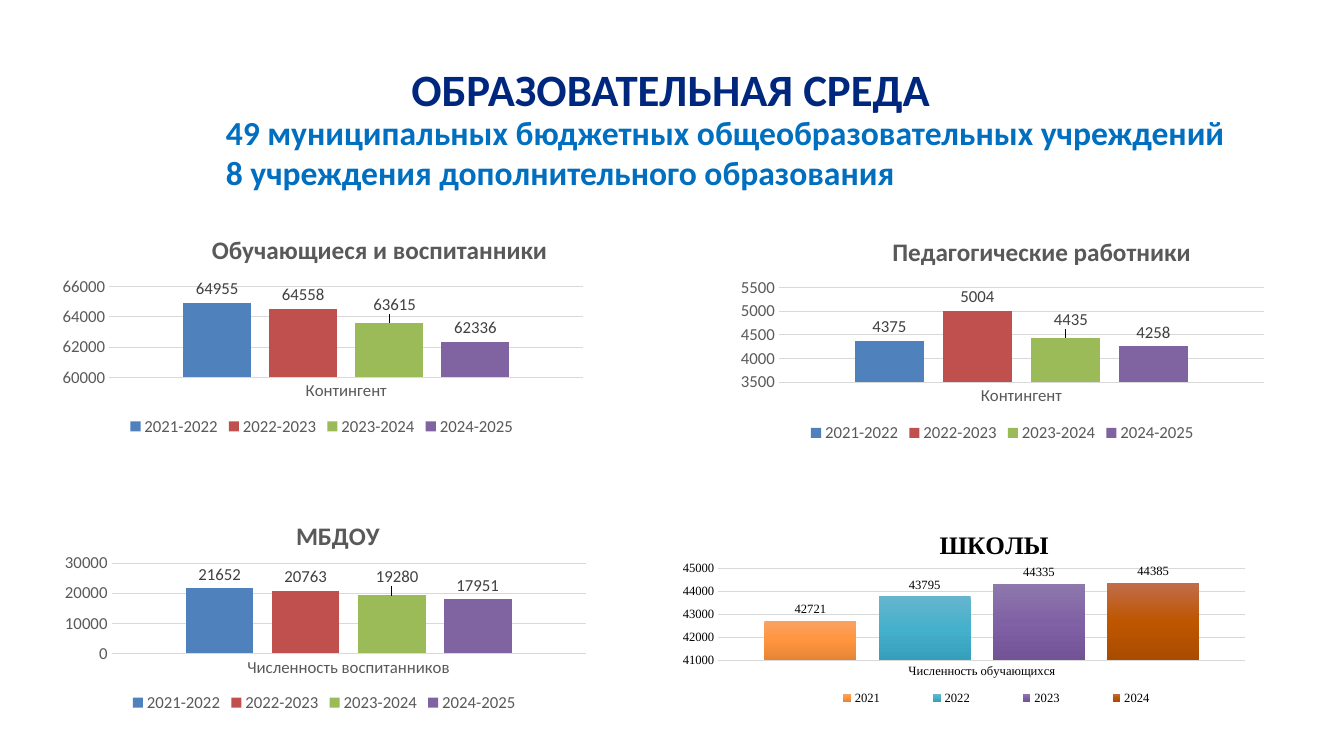
from pptx import Presentation
from pptx.chart.data import CategoryChartData
from pptx.dml.color import RGBColor
from pptx.enum.chart import XL_CHART_TYPE, XL_LABEL_POSITION, XL_LEGEND_POSITION, XL_TICK_MARK
from pptx.enum.text import MSO_ANCHOR, MSO_AUTO_SIZE, PP_ALIGN
from pptx.oxml import parse_xml
from pptx.oxml.ns import nsdecls, qn
from pptx.util import Cm, Pt

NAVY = RGBColor(0x00, 0x27, 0x7E)
BLUE = RGBColor(0x00, 0x6F, 0xC0)
BLACK = RGBColor(0x00, 0x00, 0x00)
DARK = RGBColor(0x40, 0x40, 0x40)
GREY = RGBColor(0x59, 0x59, 0x59)
PALE = RGBColor(0xD9, 0xD9, 0xD9)
SOLID = [
    RGBColor(0x4F, 0x81, 0xBD),
    RGBColor(0xC0, 0x50, 0x4D),
    RGBColor(0x9B, 0xBB, 0x59),
    RGBColor(0x80, 0x64, 0xA2),
]
BLEND = [
    (RGBColor(0xFA, 0xA2, 0x63), RGBColor(0xFF, 0x95, 0x3E), RGBColor(0xE5, 0x84, 0x35)),
    (RGBColor(0x66, 0xB5, 0xCD), RGBColor(0x45, 0xB0, 0xCC), RGBColor(0x36, 0xA0, 0xBC)),
    (RGBColor(0x8E, 0x78, 0xAC), RGBColor(0x80, 0x61, 0xA5), RGBColor(0x71, 0x53, 0x96)),
    (RGBColor(0xC1, 0x6D, 0x4B), RGBColor(0xBE, 0x56, 0x00), RGBColor(0xA9, 0x4C, 0x00)),
]
TERMS = ["2021-2022", "2022-2023", "2023-2024", "2024-2025"]
YEARS = ["2021", "2022", "2023", "2024"]


def style(font, size, color, face="Calibri", bold=False):
    font.size = Pt(size)
    font.color.rgb = color
    font.name = face
    font.bold = bold


def write(frame, lines, align=PP_ALIGN.LEFT, **look):
    frame.text = "\n".join(lines)
    for para in frame.paragraphs:
        para.alignment = align
        para.space_before = Pt(0)
        for run in para.runs:
            style(run.font, **look)


def fill_holder(shape, box, lines, **look):
    shape.left, shape.top, shape.width, shape.height = map(Cm, box)
    frame = shape.text_frame
    frame.margin_left = frame.margin_right = frame.margin_top = frame.margin_bottom = 0
    frame.word_wrap = True
    frame.auto_size = MSO_AUTO_SIZE.SHAPE_TO_FIT_TEXT
    frame.vertical_anchor = MSO_ANCHOR.TOP
    write(frame, lines, **look)
    for para in frame.paragraphs:
        props = para._p.get_or_add_pPr()
        props.set("marL", "0")
        props.set("indent", "0")
        props.append(parse_xml(f"<a:buNone {nsdecls('a')}/>"))


def place(node, index, spot, inner=False, edge=True):
    old = node.find(qn("c:layout"))
    if old is not None:
        node.remove(old)
    parts = ['<c:layoutTarget val="inner"/>'] if inner else []
    if edge:
        parts += ['<c:xMode val="edge"/>', '<c:yMode val="edge"/>']
    parts += [f'<c:{key} val="{val}"/>' for key, val in zip("xywh", spot)]
    node.insert(index, parse_xml(
        f"<c:layout {nsdecls('c')}><c:manualLayout>{''.join(parts)}</c:manualLayout></c:layout>"))


def paint(series, tint):
    if isinstance(tint, RGBColor):
        series.format.fill.solid()
        series.format.fill.fore_color.rgb = tint
        return
    stops = "".join(
        f'<a:gs pos="{i * 50000}"><a:srgbClr val="{color}"/></a:gs>' for i, color in enumerate(tint))
    series._element.get_or_add_spPr().append(parse_xml(
        f"<a:gradFill {nsdecls('a')}><a:gsLst>{stops}</a:gsLst>"
        '<a:lin ang="5400000" scaled="0"/></a:gradFill>'))


def set_axes(chart, scale, width, look):
    cat, val = chart.category_axis, chart.value_axis
    for axis in (cat, val):
        axis.major_tick_mark = axis.minor_tick_mark = XL_TICK_MARK.NONE
        style(axis.tick_labels.font, **look)
    cat.format.line.color.rgb = PALE
    cat.format.line.width = Pt(width)
    val.format.line.fill.background()
    val.minimum_scale, val.maximum_scale, val.major_unit = scale
    val.has_major_gridlines = True
    val.major_gridlines.format.line.color.rgb = PALE
    val.major_gridlines.format.line.width = Pt(0.75)


def add_bars(slide, box, title, spot, group, names, values, scale, plot,
             tints=SOLID, face="Calibri", size=12, color=GREY, tone=DARK,
             gap=219, lap=-27, width=0.75, key=None, lift=2):
    data = CategoryChartData()
    data.categories = [group]
    for name, value in zip(names, values):
        data.add_series(name, [value])
    chart = slide.shapes.add_chart(XL_CHART_TYPE.COLUMN_CLUSTERED, *map(Cm, box), data).chart
    style(chart.font, 10, BLACK, face)
    chart.has_title = True
    write(chart.chart_title.text_frame, [title], align=PP_ALIGN.CENTER,
          size=18, color=color, face=face, bold=True)
    place(chart.chart_title._element, 1, spot)
    place(chart._chartSpace.chart.plotArea, 0, plot, inner=True)

    look = dict(size=size, color=color, face=face)
    set_axes(chart, scale, width, look)
    chart.has_legend = True
    chart.legend.position = XL_LEGEND_POSITION.BOTTOM
    chart.legend.include_in_layout = False
    style(chart.legend.font, **look)
    if key:
        place(chart.legend._element, 1, key)

    bars = chart.plots[0]
    bars.vary_by_categories = False
    bars.gap_width, bars.overlap = gap, lap
    for i, (series, tint) in enumerate(zip(bars.series, tints)):
        paint(series, tint)
        labels = series.data_labels
        labels.show_value = True
        labels.position = XL_LABEL_POSITION.OUTSIDE_END
        style(labels.font, size, tone, face)
        if i == lift:
            label = series.points[0].data_label
            style(label.font, size, tone, face)
            label.position = XL_LABEL_POSITION.OUTSIDE_END
            place(series._element.find(".//" + qn("c:dLbl")), 1, (0.01, -0.02), edge=False)


def main():
    deck = Presentation()
    deck.slide_width, deck.slide_height = Cm(33.87), Cm(19.05)
    slide = deck.slides.add_slide(deck.slide_layouts[1])
    fill_holder(slide.shapes.title, (2.06, 1.55, 29.69, 1.63), ["ОБРАЗОВАТЕЛЬНАЯ СРЕДА"],
                align=PP_ALIGN.CENTER, size=32, color=NAVY, bold=True)
    fill_holder(slide.placeholders[1], (5.69, 2.82, 25.4, 2.06),
                ["49 муниципальных бюджетных общеобразовательных учреждений",
                 "8 учреждения дополнительного образования"],
                size=24, color=BLUE, bold=True)
    add_bars(slide, (16.92, 12.75, 14.76, 5.26), "ШКОЛЫ", (0.45, 0.09),
             "Численность обучающихся", YEARS, [42721, 43795, 44335, 44385],
             (41000, 45000, 1000), (0.08, 0.3, 0.9, 0.44), tints=BLEND,
             face="Times New Roman", size=9, color=BLACK, tone=BLACK,
             gap=100, lap=-24, width=1, key=(0.21, 0.87, 0.69, 0.1), lift=None)
    add_bars(slide, (1.3, 12.37, 13.74, 5.69), "МБДОУ", (0.44, 0.1),
             "Численность воспитанников", TERMS, [21652, 20763, 19280, 17951],
             (0, 30000, 10000), (0.11, 0.32, 0.87, 0.4))
    add_bars(slide, (1.24, 5.41, 13.74, 5.69), "Обучающиеся и воспитанники", (0.29, 0.06),
             "Контингент", TERMS, [64955, 64558, 63615, 62336],
             (60000, 66000, 2000), (0.11, 0.32, 0.87, 0.4))
    add_bars(slide, (18.39, 5.44, 13.74, 5.82), "Педагогические работники", (0.29, 0.06),
             "Контингент", TERMS, [4375, 5004, 4435, 4258],
             (3500, 5500, 500), (0.09, 0.31, 0.89, 0.41))
    deck.save("out.pptx")


if __name__ == "__main__":
    main()
